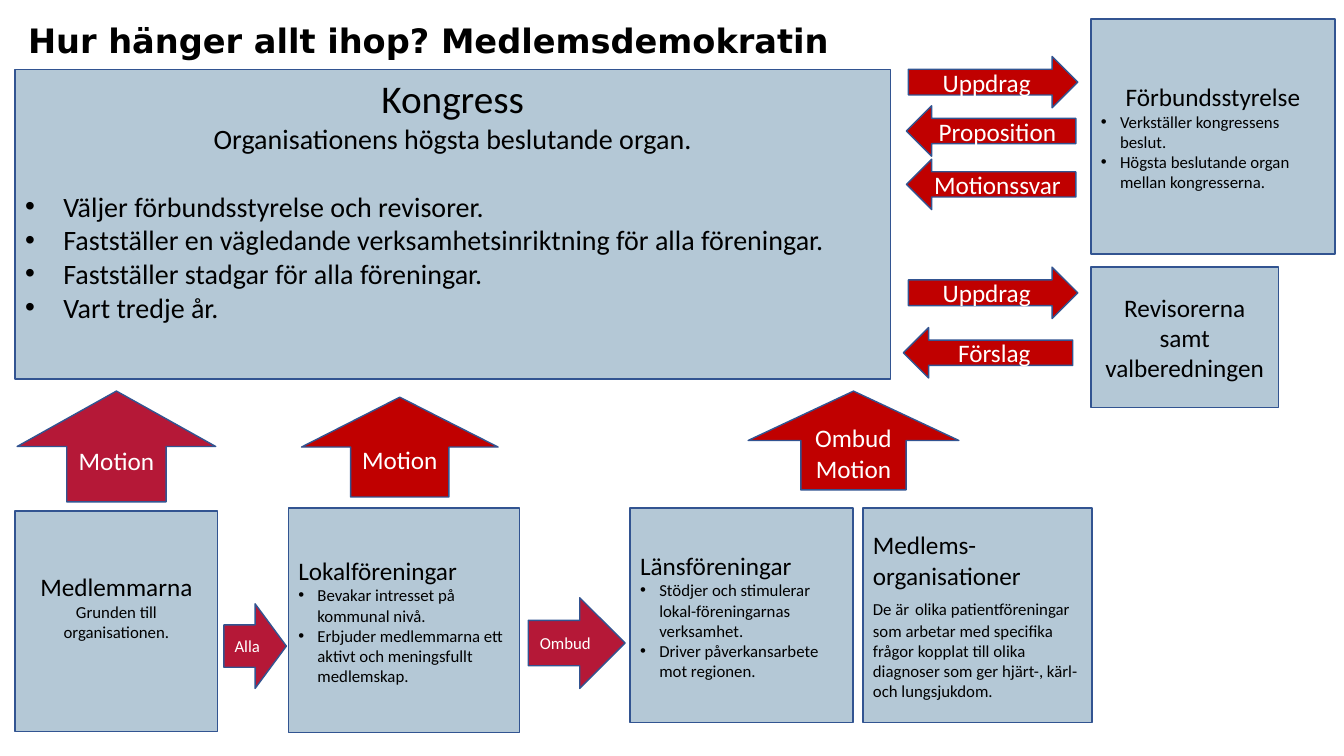
from dataclasses import dataclass

from lxml import etree
from pptx import Presentation
from pptx.dml.color import RGBColor
from pptx.enum.shapes import MSO_SHAPE as Preset
from pptx.enum.text import MSO_ANCHOR as Anchor, PP_ALIGN as Align
from pptx.oxml.ns import qn
from pptx.util import Inches, Pt

PALE_BLUE, OUTLINE = "B4C8D6", "325491"
RED, CRIMSON = "C00000", "B51837"
BLACK, WHITE = "000000", "FFFFFF"


@dataclass(frozen=True)
class Line:
    """One paragraph; runs are pairs of text and size in points."""
    runs: tuple[tuple[str, int], ...]
    centred: bool = False
    indent: float = 0  # hanging indent of a bullet, in inches
    space_before: float = 0


@dataclass(frozen=True)
class Box:
    left: float
    top: float
    width: float
    height: float
    lines: tuple[Line, ...]
    anchor: Anchor = Anchor.MIDDLE
    bottom_inset: float = 0.05


@dataclass(frozen=True)
class Arrow:
    preset: Preset
    left: float
    top: float
    width: float
    height: float
    labels: tuple[str, ...]
    fill: str = RED
    size: int = 18


def plain(text: str, size: int, centred: bool = False) -> Line:
    return Line(((text, size),), centred)


def bullet(text: str, size: int = 12, indent: float = 0.19, space_before: float = 0) -> Line:
    return Line(((text, size),), indent=indent, space_before=space_before)


BOXES = (
    Box(0.15, 0.69, 8.68, 3.07, (
        plain("Kongress", 28, True),
        plain("Organisationens högsta beslutande organ.", 20, True),
        bullet("Väljer förbundsstyrelse och revisorer.", 20, 0.38, space_before=24.4),
        bullet("Fastställer en vägledande verksamhetsinriktning för alla föreningar.", 20, 0.38),
        bullet("Fastställer stadgar för alla föreningar.", 20, 0.38),
        bullet("Vart tredje år.", 20, 0.38),
    ), Anchor.TOP),
    Box(10.82, 0.19, 2.42, 2.33, (
        plain("Förbundsstyrelse", 18, True),
        bullet("Verkställer kongressens beslut."),
        bullet("Högsta beslutande organ mellan kongresserna."),
    )),
    Box(10.82, 2.65, 1.86, 1.39, (plain("Revisorerna samt valberedningen", 18, True),)),
    Box(0.15, 5.07, 2.01, 2.19, (
        plain("Medlemmarna", 18, True),
        plain("Grunden till organisationen.", 12, True),
    ), bottom_inset=0.35),
    Box(2.86, 5.04, 2.29, 2.23, (
        plain("Lokalföreningar", 18),
        bullet("Bevakar intresset på kommunal nivå."),
        bullet("Erbjuder medlemmarna ett aktivt och meningsfullt medlemskap."),
    )),
    Box(6.25, 5.04, 2.21, 2.13, (
        plain("Länsföreningar", 18),
        bullet("Stödjer och stimulerar lokal-föreningarnas verksamhet."),
        bullet("Driver påverkansarbete mot regionen."),
    )),
    Box(8.56, 5.04, 2.27, 2.13, (
        plain("Medlems-organisationer", 18),
        Line((
            ("De är", 12),
            (" ", 18),
            ("olika patientföreningar som arbetar med specifika frågor kopplat till olika "
             "diagnoser som ger hjärt-, kärl- och lungsjukdom.", 12),
        )),
    )),
)

ARROWS = (
    # Between the congress and its elected bodies
    Arrow(Preset.RIGHT_ARROW, 9.01, 0.56, 1.68, 0.51, ("Uppdrag",)),
    Arrow(Preset.LEFT_ARROW, 8.99, 1.05, 1.68, 0.5, ("Proposition",)),
    Arrow(Preset.LEFT_ARROW, 8.99, 1.58, 1.68, 0.5, ("Motionssvar",)),
    Arrow(Preset.RIGHT_ARROW, 9.01, 2.65, 1.68, 0.51, ("Uppdrag",)),
    Arrow(Preset.LEFT_ARROW, 8.96, 3.25, 1.68, 0.5, ("Förslag",)),
    # Up to the congress
    Arrow(Preset.UP_ARROW, 0.17, 3.88, 1.97, 1.1, ("Motion",), CRIMSON),
    Arrow(Preset.UP_ARROW, 2.99, 3.94, 1.95, 0.99, ("Motion",)),
    Arrow(Preset.UP_ARROW, 7.42, 3.88, 2.09, 0.98, ("Ombud", "Motion")),
    # Between the member levels
    Arrow(Preset.RIGHT_ARROW, 2.22, 5.99, 0.62, 0.84, ("Alla",), CRIMSON, 12),
    Arrow(Preset.RIGHT_ARROW, 5.24, 5.93, 0.96, 0.9, ("Ombud",), CRIMSON, 12),
)


def colour(value: str) -> RGBColor:
    return RGBColor.from_string(value)


def add_bullet(paragraph, indent: float) -> None:
    properties = paragraph._p.get_or_add_pPr()
    properties.set("marL", str(Inches(indent)))
    properties.set("indent", str(-Inches(indent)))
    etree.SubElement(properties, qn("a:buFont")).set("typeface", "Arial")
    etree.SubElement(properties, qn("a:buChar")).set("char", "•")


def write_lines(text_frame, lines: tuple[Line, ...], text_colour: str) -> None:
    for index, line in enumerate(lines):
        paragraph = text_frame.paragraphs[0] if index == 0 else text_frame.add_paragraph()
        paragraph.alignment = Align.CENTER if line.centred else Align.LEFT
        if line.space_before:
            paragraph.space_before = Pt(line.space_before)
        if line.indent:
            add_bullet(paragraph, line.indent)
        for text, size in line.runs:
            run = paragraph.add_run()
            run.text = text
            run.font.name = "Calibri"
            run.font.size = Pt(size)
            run.font.color.rgb = colour(text_colour)


def add_filled_shape(slide, preset: Preset, item: Box | Arrow, fill: str):
    shape = slide.shapes.add_shape(
        preset, Inches(item.left), Inches(item.top), Inches(item.width), Inches(item.height))
    shape.shadow.inherit = False
    shape.fill.solid()
    shape.fill.fore_color.rgb = colour(fill)
    shape.line.color.rgb = colour(OUTLINE)
    shape.line.width = Pt(1)
    shape.text_frame.word_wrap = True
    return shape


def add_box(slide, box: Box) -> None:
    text_frame = add_filled_shape(slide, Preset.RECTANGLE, box, PALE_BLUE).text_frame
    text_frame.vertical_anchor = box.anchor
    text_frame.margin_bottom = Inches(box.bottom_inset)
    write_lines(text_frame, box.lines, BLACK)


def add_arrow(slide, arrow: Arrow) -> None:
    text_frame = add_filled_shape(slide, arrow.preset, arrow, arrow.fill).text_frame
    text_frame.vertical_anchor = Anchor.MIDDLE
    lines = tuple(plain(label, arrow.size, True) for label in arrow.labels)
    write_lines(text_frame, lines, WHITE)


def add_title(slide, text: str) -> None:
    title = slide.shapes.add_textbox(Inches(0.18), Inches(0.19), Inches(11.5), Inches(0.71))
    title.text_frame.word_wrap = True
    title.text_frame.text = text
    paragraph = title.text_frame.paragraphs[0]
    paragraph.line_spacing = 0.9
    font = paragraph.runs[0].font
    font.name, font.size, font.bold = "DejaVu Sans", Pt(24), True
    font.color.rgb = colour(BLACK)


def main() -> None:
    presentation = Presentation()
    presentation.slide_width, presentation.slide_height = Inches(13.33), Inches(7.5)
    slide = presentation.slides.add_slide(presentation.slide_layouts[6])

    add_title(slide, "Hur hänger allt ihop? Medlemsdemokratin")
    for box in BOXES:
        add_box(slide, box)
    for arrow in ARROWS:
        add_arrow(slide, arrow)

    presentation.save("out.pptx")


if __name__ == "__main__":
    main()
